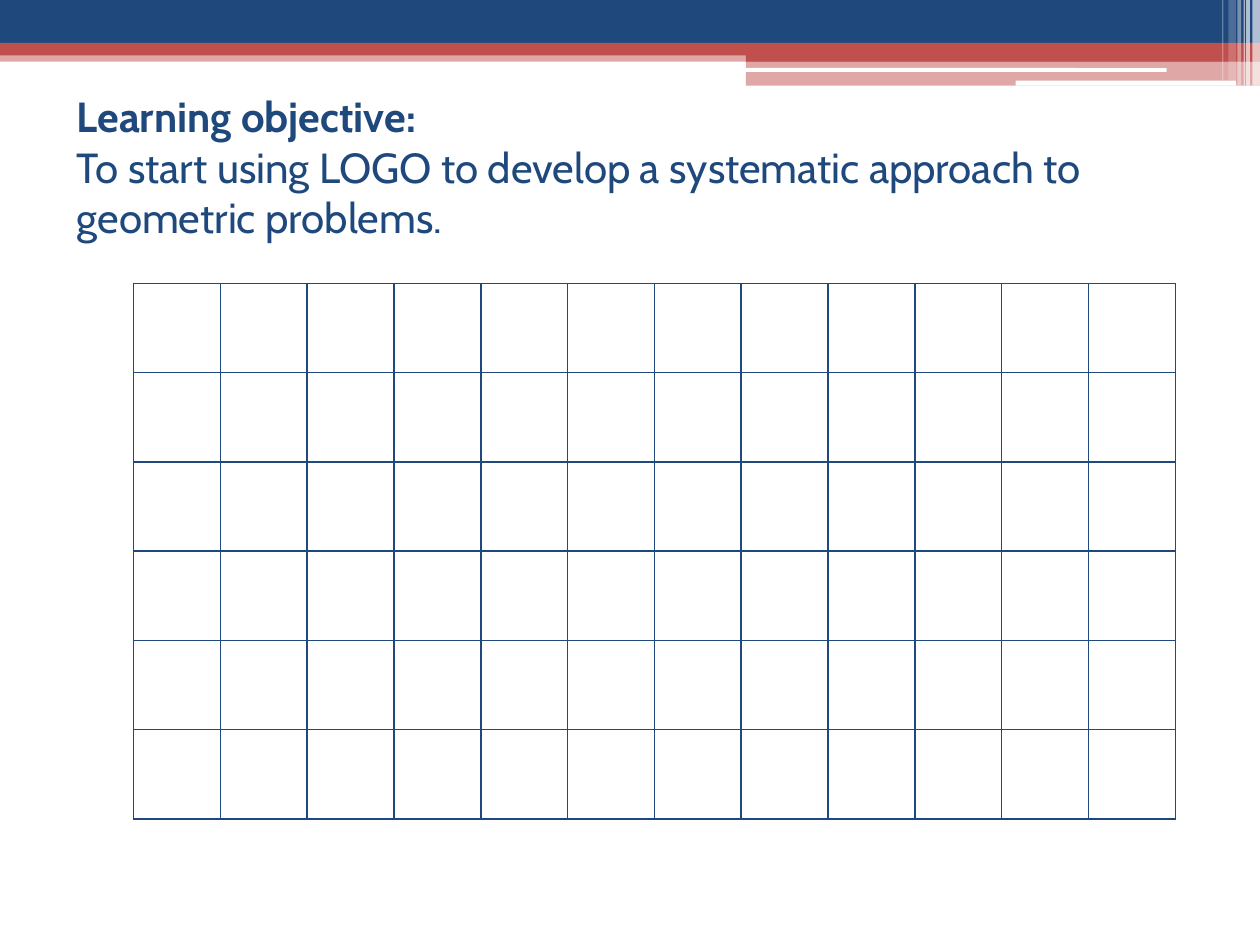
from lxml import etree
from pptx import Presentation
from pptx.dml.color import RGBColor
from pptx.enum.shapes import MSO_SHAPE
from pptx.enum.text import MSO_ANCHOR
from pptx.oxml.ns import qn
from pptx.util import Inches, Pt

RECTANGLE = MSO_SHAPE.RECTANGLE
ROUNDED = MSO_SHAPE.ROUNDED_RECTANGLE
MIDDLE = MSO_ANCHOR.MIDDLE
COLORS = {"navy": "1F497D", "red": "C0504D", "white": "FFFFFF"}
FONT = "Cabin"
COLUMNS, ROWS = 12, 6
GRID_WIDTH, GRID_HEIGHT = 8.27, 4.25

presentation = Presentation()
presentation.slide_width = Inches(10)
presentation.slide_height = Inches(7.5)
slide = presentation.slides.add_slide(presentation.slide_layouts[6])


def add_bar(kind, left, top, width, height, color, opacity=100):
    shape = slide.shapes.add_shape(
        kind, Inches(left), Inches(top), Inches(width), Inches(height))
    shape.shadow.inherit = False
    shape.line.fill.background()
    shape.fill.solid()
    shape.fill.fore_color.rgb = RGBColor.from_string(COLORS[color])
    if opacity < 100:
        fill_color = shape.fill._xPr.find(qn("a:solidFill"))[0]
        etree.SubElement(fill_color, qn("a:alpha"), val=str(opacity * 1000))


def add_borders(cell, color, width):
    properties = cell._tc.get_or_add_tcPr()
    for side in ("lnL", "lnR", "lnT", "lnB"):
        line = etree.SubElement(properties, qn(f"a:{side}"), w=str(Pt(width)))
        fill = etree.SubElement(line, qn("a:solidFill"))
        etree.SubElement(fill, qn("a:srgbClr"), val=COLORS[color])


header_bars = [
    (RECTANGLE, 0, 0.4, 10, 0.09, "red", 50),
    (RECTANGLE, 0, 0, 10, 0.34, "navy"),
    (RECTANGLE, 0, 0.34, 10, 0.1, "red"),
    (RECTANGLE, 5.92, 0.39, 4.08, 0.1, "red"),
    (RECTANGLE, 5.92, 0.48, 4.08, 0.2, "red", 50),
    (ROUNDED, 5.91, 0.54, 3.35, 0.03, "white"),
    (ROUNDED, 8.06, 0.64, 1.75, 0.04, "white"),
]
for bar in header_bars:
    add_bar(*bar)

stripes = [
    (9.94, 0.06, 0.68, 65),
    (9.89, 0.03, 0.68, 65),
    (9.87, 0.01, 0.68, 60),
    (9.82, 0.03, 0.68, 40),
    (9.75, 0.06, 0.64, 20),
    (9.7, 0.01, 0.64, 30),
]
for left, width, height, opacity in stripes:
    add_bar(RECTANGLE, left, 0, width, height, "white", opacity)

title = slide.shapes.add_textbox(
    Inches(0.51), Inches(0.78), Inches(8.92), Inches(1.08))
title.text_frame.word_wrap = True
title.text_frame.vertical_anchor = MIDDLE
paragraph = title.text_frame.paragraphs[0]
title_runs = [
    ("Learning objective:", True),
    ("To start using LOGO to develop a systematic approach to geometric problems.", False),
]
for index, (text, bold) in enumerate(title_runs):
    if index:
        paragraph.add_line_break()
    run = paragraph.add_run()
    run.text = text
    run.font.name = FONT
    run.font.size = Pt(24)
    run.font.bold = bold
    run.font.color.rgb = RGBColor.from_string(COLORS["navy"])

grid = slide.shapes.add_table(
    ROWS, COLUMNS, Inches(1.06), Inches(2.25),
    Inches(GRID_WIDTH), Inches(GRID_HEIGHT)).table
grid.first_row = False
grid.horz_banding = False
for column in grid.columns:
    column.width = Inches(GRID_WIDTH / COLUMNS)
for row in grid.rows:
    row.height = Inches(GRID_HEIGHT / ROWS)
for cell in grid.iter_cells():
    add_borders(cell, "navy", 1)
    cell.fill.background()

presentation.save("out.pptx")
